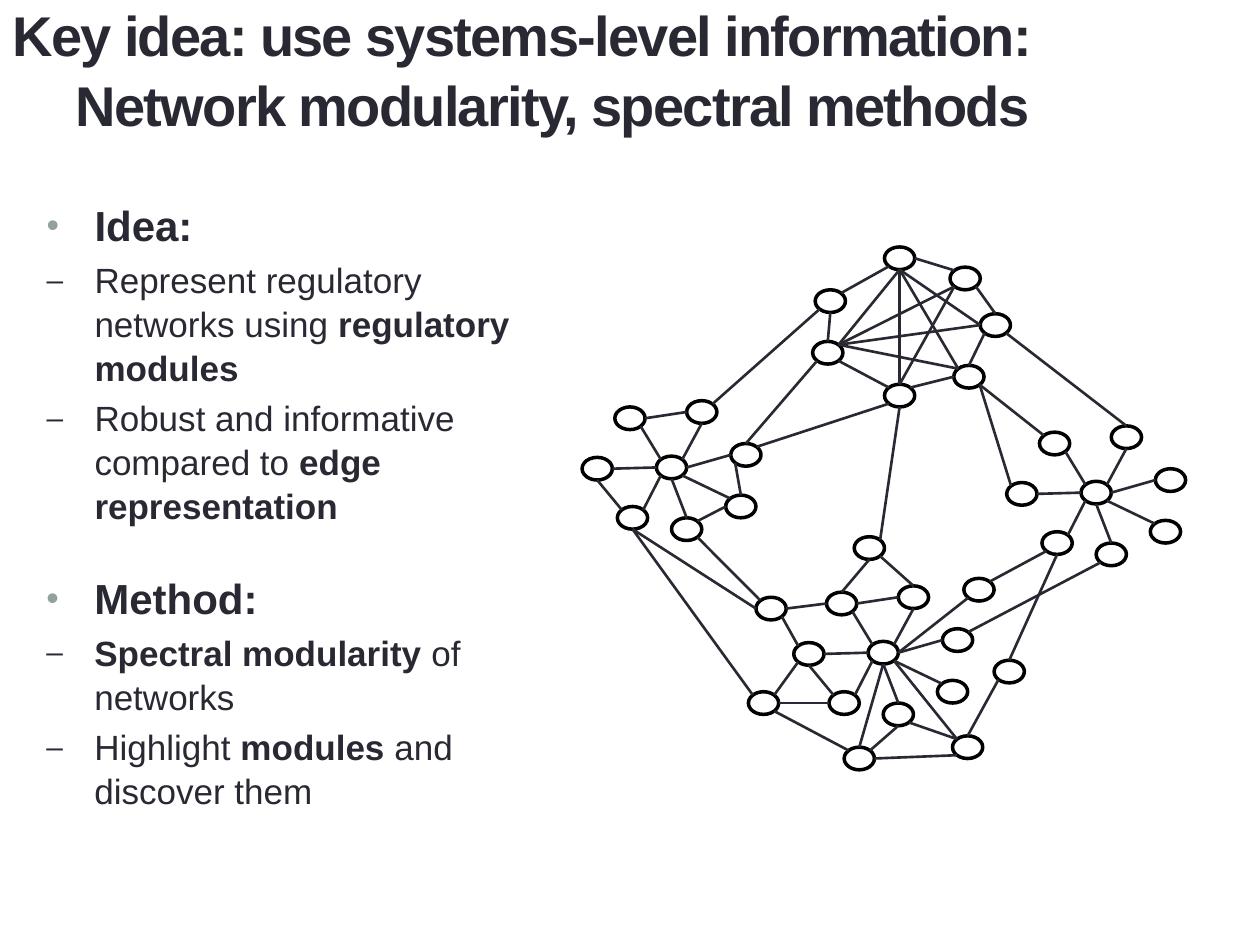
from lxml import etree
from pptx import Presentation
from pptx.dml.color import RGBColor
from pptx.enum import shapes, text
from pptx.oxml.ns import qn
from pptx.util import Inches, Pt

INK = RGBColor(0x29, 0x29, 0x34)
BLACK = RGBColor(0, 0, 0)
WHITE = RGBColor(0xFF, 0xFF, 0xFF)
SAGE = RGBColor(0x93, 0xA2, 0x99)
FONT = "Arial"

# Network geometry in inches, relative to the network box
NODE_WIDTH, NODE_HEIGHT = 0.24, 0.18
DIAGONAL = 0.71
SITES = {
    "n": (0, -1), "s": (0, 1), "w": (-1, 0), "e": (1, 0),
    "nw": (-DIAGONAL, -DIAGONAL), "ne": (DIAGONAL, -DIAGONAL),
    "sw": (-DIAGONAL, DIAGONAL), "se": (DIAGONAL, DIAGONAL),
}

# Left, bottom and right modules share one hub-and-spoke layout
HUBS = {"L": (0.59, 1.66), "B": (2.27, 3.13), "R": (3.96, 1.86)}
SPOKES = {
    "hub": (0, 0), "nw": (-0.33, -0.39), "ne": (0.24, -0.44),
    "e": (0.59, -0.1), "s": (0.12, 0.49), "sw": (-0.31, 0.4),
    "w": (-0.59, 0.01), "se": (0.55, 0.31),
}
SPOKE_EDGES = ("hub.nw-nw.se hub.ne-ne.s hub.e-e.w hub.se-se.nw "
               "hub.s-s.n hub.sw-sw.ne hub.w-w.e")
RIM_EDGES = "nw.e-ne.w w.s-sw.nw"

# Top module (T) and the outer nodes around the bottom module (O)
FREE_NODES = {
    "Tn": (2.4, 0), "Tne": (2.92, 0.16), "Te": (3.16, 0.53),
    "Tse": (2.95, 0.94), "Ts": (2.4, 1.09), "Tsw": (1.83, 0.75),
    "Tnw": (1.85, 0.34),
    "On": (2.16, 2.3), "One": (3.03, 2.63), "Oe": (3.27, 3.28),
    "Ose": (2.94, 3.88), "Os": (2.08, 3.97), "Osw": (1.32, 3.53),
    "Ow": (1.38, 2.78),
}
# Each edge reads node.site-node.site
TOP_EDGES = """
    Tn.sw-Tnw.ne Te.n-Tne.se Tn.e-Tne.nw Tnw.s-Tsw.n Te.sw-Tse.n
    Ts.ne-Tse.w Tsw.se-Ts.nw Tsw.ne-Tn.s Tsw.ne-Te.w Tsw.ne-Tne.sw
    Tsw.ne-Tse.nw Tn.s-Ts.n Tn.s-Tse.nw Tn.s-Te.w Tne.sw-Ts.n"""
OUTER_EDGES = """
    Bhub.se-Ose.nw Ose.n-Oe.sw Ose.sw-Os.e Osw.ne-Bw.sw Osw.e-Bsw.w
    Ow.se-Bw.nw Ow.e-Bnw.w Osw.se-Os.nw On.s-Bnw.n On.se-Bne.n
    Bhub.e-One.sw Bhub.s-Os.n Bs.se-Ose.nw Bs.s-Os.ne"""
BRIDGE_EDGES = """
    Le.sw-Lse.n Ls.ne-Lse.w Ls.se-Ow.nw Rsw.sw-One.ne Oe.n-Rsw.s
    Le.ne-Ts.sw Tse.se-Rw.nw Tse.se-Rnw.nw Le.n-Tsw.sw Tnw.sw-Lne.ne
    Ts.s-On.ne Ow.w-Lsw.s Rs.sw-Be.ne Rne.n-Te.se Lsw.s-Osw.nw"""

# Each item is a list of (text, bold) runs
IDEA = ("Idea:", [
    [("Represent regulatory networks using ", False), ("regulatory modules", True)],
    [("Robust and informative compared to ", False), ("edge representation", True)],
])
METHOD = ("Method:", [
    [("Spectral modularity ", True), ("of networks", False)],
    [("Highlight ", False), ("modules", True), (" and discover them", False)],
])


def place(shape, box):
    for name, value in zip(("left", "top", "width", "height"), box):
        setattr(shape, name, Inches(value))


def style_run(run, size, bold):
    values = {"name": FONT, "size": Pt(size), "bold": bold}
    for name, value in values.items():
        setattr(run.font, name, value)
    run.font.color.rgb = INK


def add_title(slide, box):
    title = slide.shapes.title
    place(title, box)
    frame = title.text_frame
    frame.auto_size = text.MSO_AUTO_SIZE.NONE
    frame.vertical_anchor = text.MSO_ANCHOR.MIDDLE
    frame.text = ("Key idea: use systems-level information: \v"
                  "\tNetwork modularity, spectral methods")
    paragraph = frame.paragraphs[0]
    paragraph.alignment = text.PP_ALIGN.LEFT
    paragraph.line_spacing = 1.04
    for run in paragraph.runs:
        style_run(run, 32, True)
        run.font._element.set("spc", "-100")


def set_bullet(paragraph, character, color):
    properties = paragraph._p.get_or_add_pPr()
    properties.set("marL", str(Inches(0.38)))
    properties.set("indent", str(-Inches(0.38)))
    bullet_color = etree.SubElement(properties, qn("a:buClr"))
    etree.SubElement(bullet_color, qn("a:srgbClr"), val=str(color))
    etree.SubElement(properties, qn("a:buSzPct"), val="85000")
    etree.SubElement(properties, qn("a:buFont"), typeface=FONT)
    etree.SubElement(properties, qn("a:buChar"), char=character)


def fill_list(shape, box, heading, items):
    place(shape, box)
    frame = shape.text_frame
    frame.word_wrap = True
    frame.auto_size = text.MSO_AUTO_SIZE.NONE
    frame.vertical_anchor = text.MSO_ANCHOR.TOP
    rows = [([(heading, True)], 24, "•", SAGE)]
    rows += [(runs, 20, "–", INK) for runs in items]
    for index, (runs, size, bullet, color) in enumerate(rows):
        paragraph = frame.add_paragraph() if index else frame.paragraphs[0]
        paragraph.alignment = text.PP_ALIGN.LEFT
        paragraph.line_spacing = 1.04
        paragraph.space_before = Pt(size * 0.2)
        set_bullet(paragraph, bullet, color)
        for words, bold in runs:
            run = paragraph.add_run()
            run.text = words
            style_run(run, size, bold)


def prefix_edges(module, edges):
    return ["-".join(module + end for end in edge.split("-"))
            for edge in edges.split()]


def add_node(slide, left, top):
    node = slide.shapes.add_shape(
        shapes.MSO_SHAPE.OVAL, Inches(left), Inches(top),
        Inches(NODE_WIDTH), Inches(NODE_HEIGHT))
    node.shadow.inherit = False
    node.fill.solid()
    node.fill.fore_color.rgb = WHITE
    node.line.color.rgb = BLACK
    node.line.width = Pt(2)


def add_edge(slide, start, end):
    edge = slide.shapes.add_connector(
        shapes.MSO_CONNECTOR.STRAIGHT, *map(Inches, start + end))
    edge.line.color.rgb = INK
    edge.line.width = Pt(1.5)
    etree.SubElement(edge._element.spPr, qn("a:effectLst"))


def add_network(slide, left, top):
    nodes = dict(FREE_NODES)
    edges = (TOP_EDGES + OUTER_EDGES + BRIDGE_EDGES).split()
    for module, (hub_x, hub_y) in HUBS.items():
        for name, (x, y) in SPOKES.items():
            nodes[module + name] = (hub_x + x, hub_y + y)
        edges += prefix_edges(module, SPOKE_EDGES)
    for module in "LB":
        edges += prefix_edges(module, RIM_EDGES)

    def site_point(end):
        name, site = end.split(".")
        x, y = nodes[name]
        across, down = SITES[site]
        return (left + x + NODE_WIDTH / 2 * (1 + across),
                top + y + NODE_HEIGHT / 2 * (1 + down))

    for x, y in nodes.values():
        add_node(slide, left + x, top + y)
    for edge in edges:
        add_edge(slide, *map(site_point, edge.split("-")))


def main():
    presentation = Presentation()
    presentation.slide_width, presentation.slide_height = Inches(10), Inches(7.5)
    slide = presentation.slides.add_slide(presentation.slide_layouts[1])
    add_title(slide, (0, 0, 10, 1.08))
    add_network(slide, 4.62, 1.96)
    # Idea list in the body placeholder, method list below it
    fill_list(slide.placeholders[1], (0.27, 1.52, 3.88, 2.73), *IDEA)
    method_box = slide.shapes.add_textbox(0, 0, 0, 0)
    fill_list(method_box, (0.27, 4.48, 3.88, 2.73), *METHOD)
    presentation.save("out.pptx")


if __name__ == "__main__":
    main()
